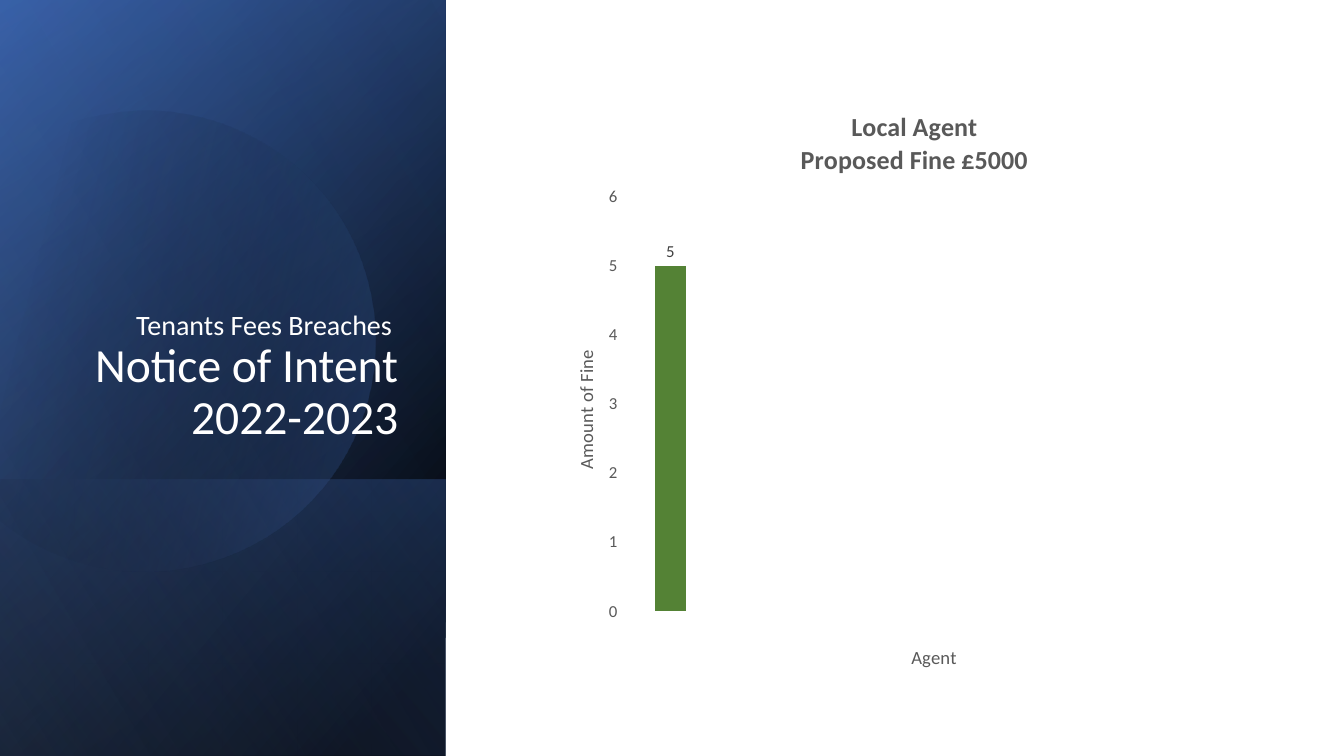
from dataclasses import dataclass
from math import cos, radians, sin

from lxml.etree import SubElement
from pptx import Presentation
from pptx.chart.data import CategoryChartData as Data
from pptx.dml.color import RGBColor as Rgb
from pptx.enum.chart import XL_CHART_TYPE as Kind
from pptx.enum.chart import XL_LABEL_POSITION as Spot
from pptx.enum.chart import XL_TICK_MARK as Tick
from pptx.enum.shapes import MSO_SHAPE as Form
from pptx.enum.text import MSO_ANCHOR as Anchor
from pptx.enum.text import PP_ALIGN as Align
from pptx.oxml.ns import qn
from pptx.util import Inches, Pt

WIDE, TALL = Inches(13.33), Inches(7.5)
COLS, ROWS = 133.3, 75
FONT = "Calibri"
HUES = {
    "black": "000000", "white": "FFFFFF", "navy": "2F5597", "blue": "4472C4",
    "sky": "8FAADC", "green": "548235", "pale": "B4B4B4", "mid": "848484",
    "gray": "595959", "dark": "404040",
}
TURN = 343.9
HUB = (15.85, 33.45)
START = (14.9, 11)
CURVES = [
    [(24.6, 11.2), (33.5, 17.7), (36.3, 27.5)],
    [(39.8, 39.7), (32.8, 52.3), (20.7, 55.8)],
    [(13.1, 58), (5.3, 56.1), (-0.3, 51.4)],
    [(-1.5, 50.3)],
    [(-1.5, 17.5)],
    [(0, 16.1)],
    [(2.3, 14.2), (5, 12.8), (8, 11.9)],
    [(10.3, 11.3), (12.6, 11), START],
]
Point = tuple[float, float]


@dataclass
class Stop:
    at: float
    hue: str
    alpha: int = 100


@dataclass
class Blend:
    first: Stop
    last: Stop
    angle: int


@dataclass
class Panel:
    top: float
    tall: float
    blend: Blend


def col(n: float) -> int:
    return round(WIDE * n / COLS)


def row(n: float) -> int:
    return round(TALL * n / ROWS)


def tint(hue: str) -> Rgb:
    return Rgb.from_string(HUES[hue])


def ink(font, size: float, hue: str, bold: bool = False) -> None:
    font.name, font.size, font.bold = FONT, Pt(size), bold
    font.color.rgb = tint(hue)


def shade(shape, blend: Blend) -> None:
    shape.shadow.inherit = False
    shape.line.fill.background()
    shape.fill.gradient()
    shape.fill.gradient_angle = 360 - blend.angle
    stops = (blend.first, blend.last)
    for mark, stop in zip(shape.fill.gradient_stops, stops):
        mark.position = stop.at / 100
        mark.color.rgb = tint(stop.hue)
    nodes = shape._element.spPr.iter(qn("a:srgbClr"))
    for node, stop in zip(list(nodes), stops):
        if stop.alpha < 100:
            SubElement(node, qn("a:alpha")).set("val", str(stop.alpha * 1000))


def draw_panel(slide, panel: Panel) -> None:
    wide, mid = 44.2, panel.top + panel.tall / 2
    shape = slide.shapes.add_shape(
        Form.RECTANGLE, col((wide - panel.tall) / 2), row(mid - wide / 2),
        col(panel.tall), row(wide))
    shape.rotation = 90
    shape._element.spPr.xfrm.set("flipH", "1")
    shade(shape, panel.blend)


def unturn(spot: Point) -> Point:
    x, y = spot[0] - HUB[0], spot[1] - HUB[1]
    a = radians(-TURN)
    x, y = x * cos(a) - y * sin(a), x * sin(a) + y * cos(a)
    return col(HUB[0] + x), row(HUB[1] + y)


def bend(a: Point, b: Point, c: Point, d: Point, t: float) -> Point:
    u = 1 - t
    x, y = (u**3 * p + 3 * u * u * t * q + 3 * u * t * t * r + t**3 * s
            for p, q, r, s in zip(a, b, c, d))
    return x, y


def draw_disc(slide, blend: Blend) -> None:
    spots, last = [], START
    for curve in CURVES:
        if len(curve) == 3:
            spots += [bend(last, *curve, n / 24) for n in range(1, 25)]
        else:
            spots += curve
        last = curve[-1]
    form = slide.shapes.build_freeform(*unturn(START))
    form.add_line_segments([unturn(spot) for spot in spots], close=True)
    shape = form.convert_to_shape()
    shape.rotation = TURN
    shade(shape, blend)


def draw_title(slide) -> None:
    frame = slide.shapes.add_textbox(
        col(6.4), row(18.4), col(34.1), row(26.2)).text_frame
    frame.word_wrap = True
    frame.vertical_anchor = Anchor.BOTTOM
    para = frame.paragraphs[0]
    para.text = "Tenants Fees Breaches \vNotice of Intent\v2022-2023"
    para.alignment, para.line_spacing = Align.RIGHT, 0.9
    for run, size in zip(para.runs, (20, 34, 34)):
        ink(run.font, size, "white")


def place(node, **shares: float) -> None:
    lay = node.find(qn("c:layout"))
    if lay is None:
        lay = SubElement(node, qn("c:layout"))
        node.insert(0, lay)
    box = SubElement(lay, qn("c:manualLayout"))
    if "w" in shares:
        SubElement(box, qn("c:layoutTarget")).set("val", "inner")
    for side in "xy":
        SubElement(box, qn(f"c:{side}Mode")).set("val", "edge")
    for key, share in shares.items():
        SubElement(box, qn(f"c:{key}")).set("val", str(share))


def label(title, text: str, size: float, bold: bool, x: float, y: float) -> None:
    title.text_frame.text = text
    for para in title.text_frame.paragraphs:
        for run in para.runs:
            ink(run.font, size, "gray", bold)
    place(title._element, x=x, y=y)


def draw_chart(slide) -> None:
    data = Data()
    data.categories = ["1", "", "", ""]
    data.add_series("Series 1", (5, None, None, None))
    for name in ("Series 2", "Series 3"):
        data.add_series(name, (None,) * 4)
    chart = slide.shapes.add_chart(
        Kind.COLUMN_CLUSTERED, col(53.6), row(8.2), col(72.9), row(59.6),
        data).chart
    ink(chart.font, 10, "black")
    chart.has_legend = False
    label(chart.chart_title, "Local Agent\nProposed Fine £5000", 18.6, True,
          0.35, 0.04)
    plot = chart.plots[0]
    plot.gap_width, plot.overlap, plot.vary_by_categories = 219, 0, False
    for bars, hue in zip(plot.series, ("green", "pale", "mid")):
        bars.format.fill.solid()
        bars.format.fill.fore_color.rgb = tint(hue)
    tags = plot.series[0].data_labels
    tags.show_value, tags.position = True, Spot.OUTSIDE_END
    ink(tags.font, 12, "dark")
    base, axis = chart.category_axis, chart.value_axis
    base.visible = False
    label(base.axis_title, "Agent", 13.3, False, 0.5, 0.93)
    label(axis.axis_title, "Amount of Fine", 13.3, False, 0.04, 0.44)
    body = axis.axis_title.text_frame._txBody.bodyPr
    body.set("rot", "-5400000")
    body.set("vert", "horz")
    axis.minimum_scale, axis.maximum_scale, axis.major_unit = 0, 6, 1
    axis.has_major_gridlines = False
    axis.major_tick_mark = axis.minor_tick_mark = Tick.NONE
    axis.format.line.fill.background()
    ink(axis.tick_labels.font, 12, "gray")
    place(chart._chartSpace.chart.plotArea, x=0.11, y=0.19, w=0.87, h=0.69)


def main() -> None:
    deck = Presentation()
    deck.slide_width, deck.slide_height = WIDE, TALL
    slide = deck.slides.add_slide(deck.slide_layouts[6])
    for panel in (
        Panel(0, 75, Blend(Stop(8, "black"), Stop(100, "navy"), 50)),
        Panel(0, 75, Blend(Stop(0, "black", 0), Stop(99, "blue", 46), 30)),
        Panel(47.6, 27.4, Blend(Stop(2, "blue", 29), Stop(100, "black", 30), 130)),
    ):
        draw_panel(slide, panel)
    draw_disc(slide, Blend(Stop(29, "black", 0), Stop(100, "blue", 43), 30))
    draw_panel(slide, Panel(
        0, 75, Blend(Stop(0, "black", 0), Stop(99, "sky", 11), 120)))
    draw_title(slide)
    draw_chart(slide)
    deck.save("out.pptx")


if __name__ == "__main__":
    main()
